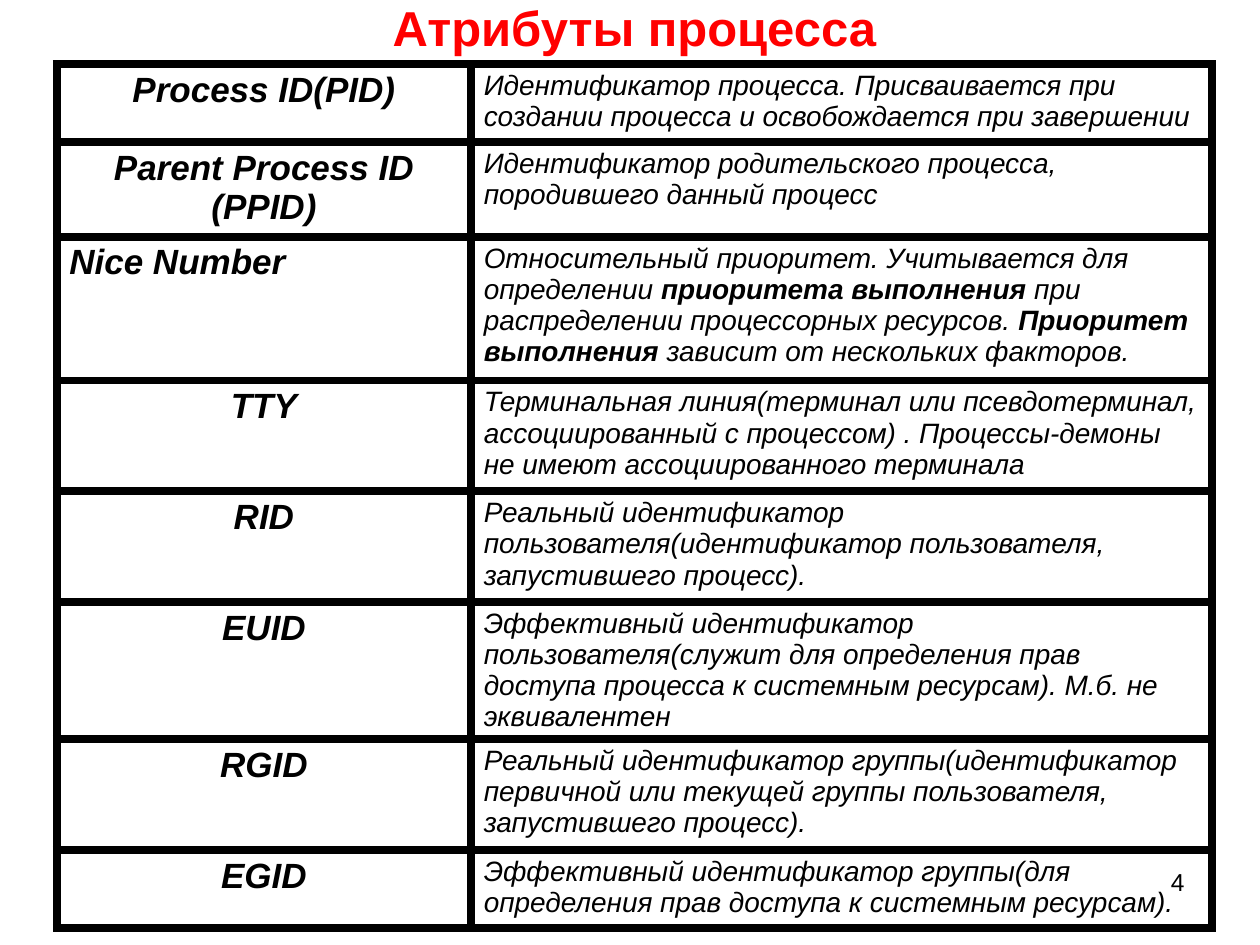
from lxml.etree import SubElement
from pptx import Presentation
from pptx.dml.color import RGBColor
from pptx.enum.text import MSO_ANCHOR, PP_ALIGN
from pptx.oxml.ns import qn
from pptx.util import Inches, Pt

FONT = "Arial"
BLACK, RED, WHITE = "000000", "FF0000", "FFFFFF"
COLUMN_WIDTHS = (3.29, 5.88)
ROWS = [
    (0.62, "Process ID(PID)",
     ["Идентификатор процесса. Присваивается при создании процесса и освобождается при завершении"]),
    (0.75, "Parent Process ID (PPID)",
     ["Идентификатор родительского процесса, породившего данный процесс"]),
    (1.14, "Nice Number",
     ["Относительный приоритет. Учитывается для определении ",
      "приоритета выполнения ",
      "при распределении процессорных ресурсов. ",
      "Приоритет выполнения",
      " зависит от нескольких факторов."]),
    (0.88, "TTY",
     ["Терминальная линия(терминал или псевдотерминал, ассоциированный с процессом) . "
      "Процессы-демоны не имеют ассоциированного терминала"]),
    (0.88, "RID",
     ["Реальный идентификатор пользователя(идентификатор пользователя, запустившего процесс)."]),
    (0.88, "EUID",
     ["Эффективный идентификатор пользователя(служит для определения прав доступа процесса "
      "к системным ресурсам). М.б. не эквивалентен"]),
    (0.88, "RGID",
     ["Реальный идентификатор группы(идентификатор первичной или текущей группы пользователя, "
      "запустившего процесс)."]),
    (0.62, "EGID",
     ["Эффективный идентификатор группы(для определения прав доступа к системным ресурсам)."]),
]


def color(value):
    """Convert a hex string to a colour."""
    return RGBColor.from_string(value)


def format_run(run, size, value=BLACK, bold=False, italic=False):
    """Set the font of a run."""
    font = run.font
    font.name, font.size, font.bold, font.italic = FONT, Pt(size), bold, italic
    font.color.rgb = color(value)


def add_title(slide, text):
    """Place and format the title."""
    title = slide.shapes.title
    title.left, title.top = Inches(0.45), Inches(-0.07)
    title.width, title.height = Inches(9.17), Inches(0.42)
    title.fill.solid()
    title.fill.fore_color.rgb = color(WHITE)
    title.text_frame.text = text
    title.text_frame.vertical_anchor = MSO_ANCHOR.TOP
    paragraph = title.text_frame.paragraphs[0]
    paragraph.alignment = PP_ALIGN.CENTER
    format_run(paragraph.runs[0], 28, RED, bold=True)


def add_borders(cell, width, value):
    """Draw all four borders of a cell."""
    properties = cell._tc.get_or_add_tcPr()
    for position, side in enumerate(("a:lnL", "a:lnR", "a:lnT", "a:lnB")):
        line = SubElement(properties, qn(side), w=str(Pt(width)))
        fill = SubElement(line, qn("a:solidFill"))
        SubElement(fill, qn("a:srgbClr"), val=value)
        properties.remove(line)
        properties.insert(position, line)


def fill_cell(cell, parts, size, alignment, bold_first):
    """Write runs that alternate between bold and regular."""
    cell.fill.solid()
    cell.fill.fore_color.rgb = color(WHITE)
    add_borders(cell, 5, BLACK)
    paragraph = cell.text_frame.paragraphs[0]
    paragraph.alignment = alignment
    for index, part in enumerate(parts):
        run = paragraph.add_run()
        run.text = part
        format_run(run, size, bold=(index % 2 == 0) == bold_first, italic=True)


def add_attribute_table(slide):
    """Add the table of process attributes."""
    total_height = sum(height for height, _, _ in ROWS)
    table = slide.shapes.add_table(
        len(ROWS), len(COLUMN_WIDTHS), Inches(0.45), Inches(0.51),
        Inches(sum(COLUMN_WIDTHS)), Inches(total_height)).table
    table.first_row = table.horz_banding = False
    for column, width in zip(table.columns, COLUMN_WIDTHS):
        column.width = Inches(width)
    for row, (height, name, description) in zip(table.rows, ROWS):
        row.height = Inches(height)
        alignment = PP_ALIGN.LEFT if name == "Nice Number" else PP_ALIGN.CENTER
        fill_cell(row.cells[0], [name], 20, alignment, True)
        fill_cell(row.cells[1], description, 16, PP_ALIGN.LEFT, False)


def add_page_number(slide, text):
    """Add the page number."""
    shape = slide.shapes.add_textbox(Inches(7.17), Inches(6.83), Inches(2.33), Inches(0.52))
    shape.text_frame.word_wrap = True
    shape.text_frame.text = text
    paragraph = shape.text_frame.paragraphs[0]
    paragraph.alignment = PP_ALIGN.RIGHT
    format_run(paragraph.runs[0], 14)


def main():
    """Build and save the presentation."""
    presentation = Presentation()
    presentation.slide_width, presentation.slide_height = Inches(10), Inches(7.5)
    slide = presentation.slides.add_slide(presentation.slide_layouts[5])
    add_title(slide, "Атрибуты процесса")
    add_attribute_table(slide)
    add_page_number(slide, "4")
    presentation.save("out.pptx")


if __name__ == "__main__":
    main()
